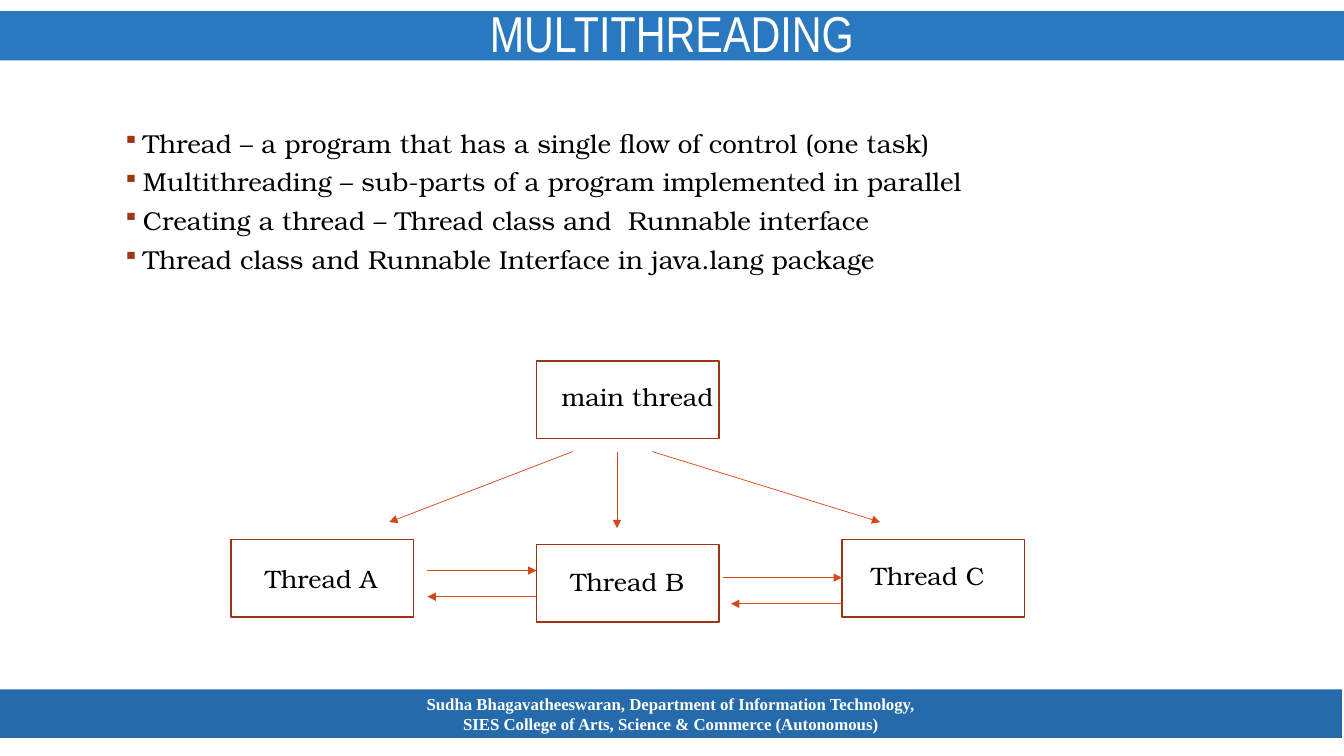
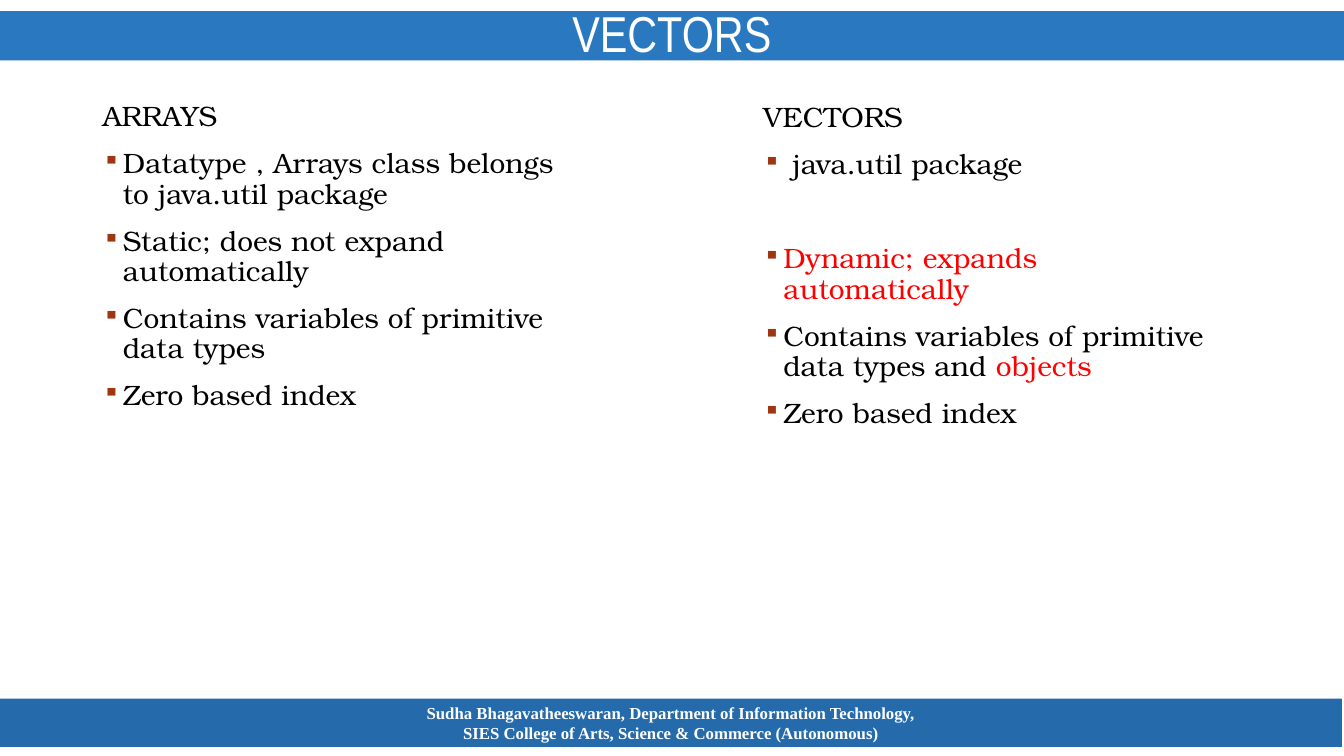
"""Build two lecture slides on multithreading and vectors."""
from dataclasses import dataclass

from lxml import etree
from pptx import Presentation
from pptx.dml.color import RGBColor
from pptx.enum.shapes import MSO_CONNECTOR, MSO_SHAPE
from pptx.enum.text import MSO_ANCHOR, PP_ALIGN
from pptx.oxml.ns import qn
from pptx.util import Inches, Pt

RECTANGLE = MSO_SHAPE.RECTANGLE
STRAIGHT = MSO_CONNECTOR.STRAIGHT
CENTER, LEFT = PP_ALIGN.CENTER, PP_ALIGN.LEFT
MIDDLE, TOP = MSO_ANCHOR.MIDDLE, MSO_ANCHOR.TOP


@dataclass(frozen=True)
class Theme:
    title_band: str = "2A79C0"
    footer_band: str = "256BAB"
    light: str = "FFFFFF"
    ink: str = "000000"
    accent: str = "FF0000"
    bullet: str = "9E3611"
    outline: str = "9C3511"
    arrow: str = "D34817"
    title_font: str = "Arial Narrow"
    body_font: str = "TeX Gyre Bonum"
    footer_font: str = "Times New Roman"
    title_size: float = 36
    column_size: float = 20
    list_size: float = 18.5
    label_size: float = 18
    footer_size: float = 12
    paragraph_gap: float = 12
    skipped_line_gap: float = 45.5
    bullet_indent: float = 0.2


FOOTER = (
    "Sudha Bhagavatheeswaran, Department of Information Technology,",
    "SIES College of Arts, Science & Commerce (Autonomous)",
)


class Lecture:
    def __init__(self, theme):
        self.theme = theme
        self.deck = Presentation()
        self.deck.slide_width = Inches(13.33)
        self.deck.slide_height = Inches(7.5)
        self.page = None

    def start_page(self, title, footer_top):
        theme = self.theme
        self.page = self.deck.slides.add_slide(self.deck.slide_layouts[6])
        frame = self.rectangle(0, 0.11, 13.33, 0.49, fill=theme.title_band)
        para = frame.paragraphs[0]
        para.alignment = CENTER
        para.line_spacing = 0.9
        self.span(para, title, theme.title_font, theme.title_size, theme.light)
        frame = self.rectangle(0, footer_top, 13.31, 0.48, fill=theme.footer_band)
        for index, line in enumerate(FOOTER):
            para = frame.add_paragraph() if index else frame.paragraphs[0]
            para.alignment = CENTER
            self.span(para, line, theme.footer_font, theme.footer_size, theme.light, True)

    def span(self, para, text, font, size, color, bold=False):
        span = para.add_run()
        span.text = text
        span.font.name = font
        span.font.size = Pt(size)
        span.font.bold = bold
        span.font.color.rgb = RGBColor.from_string(color)

    def rectangle(self, left, top, width, height, fill=None, outline=None):
        box = self.page.shapes.add_shape(
            RECTANGLE, Inches(left), Inches(top), Inches(width), Inches(height))
        box.shadow.inherit = False
        if fill:
            box.fill.solid()
            box.fill.fore_color.rgb = RGBColor.from_string(fill)
        else:
            box.fill.background()
        if outline:
            box.line.color.rgb = RGBColor.from_string(outline)
            box.line.width = Pt(1)
        else:
            box.line.fill.background()
        box.text_frame.word_wrap = True
        box.text_frame.vertical_anchor = MIDDLE
        return box.text_frame

    def thread_box(self, text, left, top, inset_left, inset_top):
        theme = self.theme
        frame = self.rectangle(left, top, 1.81, 0.77, outline=theme.outline)
        frame.vertical_anchor = TOP
        frame.margin_left = Inches(inset_left)
        frame.margin_top = Inches(inset_top)
        frame.margin_right = 0
        para = frame.paragraphs[0]
        para.alignment = LEFT
        self.span(para, text, theme.body_font, theme.label_size, theme.ink)

    def arrow(self, start, end):
        line = self.page.shapes.add_connector(
            STRAIGHT, *(Inches(value) for value in (*start, *end)))
        line.line.color.rgb = RGBColor.from_string(self.theme.arrow)
        line.line.width = Pt(0.5)
        properties = line.line._get_or_add_ln()
        etree.SubElement(properties, qn("a:tailEnd"), type="triangle")
        etree.SubElement(line._element.spPr, qn("a:effectLst"))

    def bullet(self, para, indent):
        properties = para._p.get_or_add_pPr()
        properties.set("marL", str(Inches(indent)))
        properties.set("indent", str(-Inches(indent)))
        color = etree.SubElement(properties, qn("a:buClr"))
        etree.SubElement(color, qn("a:srgbClr"), val=self.theme.bullet)
        etree.SubElement(properties, qn("a:buSzPct"), val="85000")
        etree.SubElement(properties, qn("a:buChar"), char="▪")

    def text_list(self, area, items, size, spacing, heading=None):
        theme = self.theme
        box = self.page.shapes.add_textbox(*(Inches(value) for value in area))
        frame = box.text_frame
        frame.word_wrap = True
        entries = [{"spans": [(heading, theme.ink)]}] if heading else []
        entries += [{"indent": theme.bullet_indent, **item} for item in items]
        for index, entry in enumerate(entries):
            para = frame.add_paragraph() if index else frame.paragraphs[0]
            if "indent" in entry:
                self.bullet(para, entry["indent"])
            para.line_spacing = spacing
            if index:
                para.space_before = Pt(entry.get("gap", theme.paragraph_gap))
            for text, color in entry["spans"]:
                self.span(para, text, theme.body_font, size, color)

    def plain(self, *texts):
        return [{"spans": [(text, self.theme.ink)]} for text in texts]


def multithreading_page(lecture):
    lecture.start_page("MULTITHREADING", 6.84)
    lecture.text_list((1.12, 1.3, 11.47, 1.52), lecture.plain(
        "Thread – a program that has a single flow of control (one task)",
        "Multithreading – sub-parts of a program implemented in parallel",
        "Creating a thread – Thread class and  Runnable interface",
        "Thread class and Runnable Interface in java.lang package",
    ), lecture.theme.list_size, 0.7)
    for thread in (
        ("main thread", 5.32, 3.58, 0.25, 0.2),
        ("Thread A", 2.29, 5.35, 0.34, 0.24),
        ("Thread B", 5.32, 5.4, 0.34, 0.22),
        ("Thread C", 8.35, 5.35, 0.29, 0.21),
    ):
        lecture.thread_box(*thread)
    for start, end in (
        ((5.68, 4.48), (3.86, 5.18)),
        ((6.12, 4.48), (6.12, 5.24)),
        ((6.47, 4.48), (8.73, 5.18)),
        ((4.24, 5.66), (5.32, 5.66)),
        ((5.32, 5.92), (4.24, 5.92)),
        ((7.17, 5.73), (8.35, 5.73)),
        ((8.35, 5.99), (7.25, 5.99)),
    ):
        lecture.arrow(start, end)


def vectors_page(lecture):
    theme = lecture.theme
    lecture.start_page("VECTORS", 6.93)
    lecture.text_list((0.92, 0.97, 4.75, 5.1), lecture.plain(
        "Datatype , Arrays class belongs to java.util package",
        "Static; does not expand automatically",
        "Contains variables of primitive data types",
        "Zero based index",
    ), theme.column_size, 0.9, "ARRAYS")
    lecture.text_list((7.47, 0.98, 4.75, 5.35), [
        {"spans": [("java.util package", theme.ink)], "indent": 0.29},
        {"spans": [("Dynamic; expands automatically", theme.accent)],
         "gap": theme.skipped_line_gap},
        {"spans": [("Contains variables of primitive data types and ", theme.ink),
                   ("objects", theme.accent)]},
        *lecture.plain("Zero based index"),
    ], theme.column_size, 0.9, "VECTORS")


def main():
    lecture = Lecture(Theme())
    multithreading_page(lecture)
    vectors_page(lecture)
    lecture.deck.save("out.pptx")


if __name__ == "__main__":
    main()
